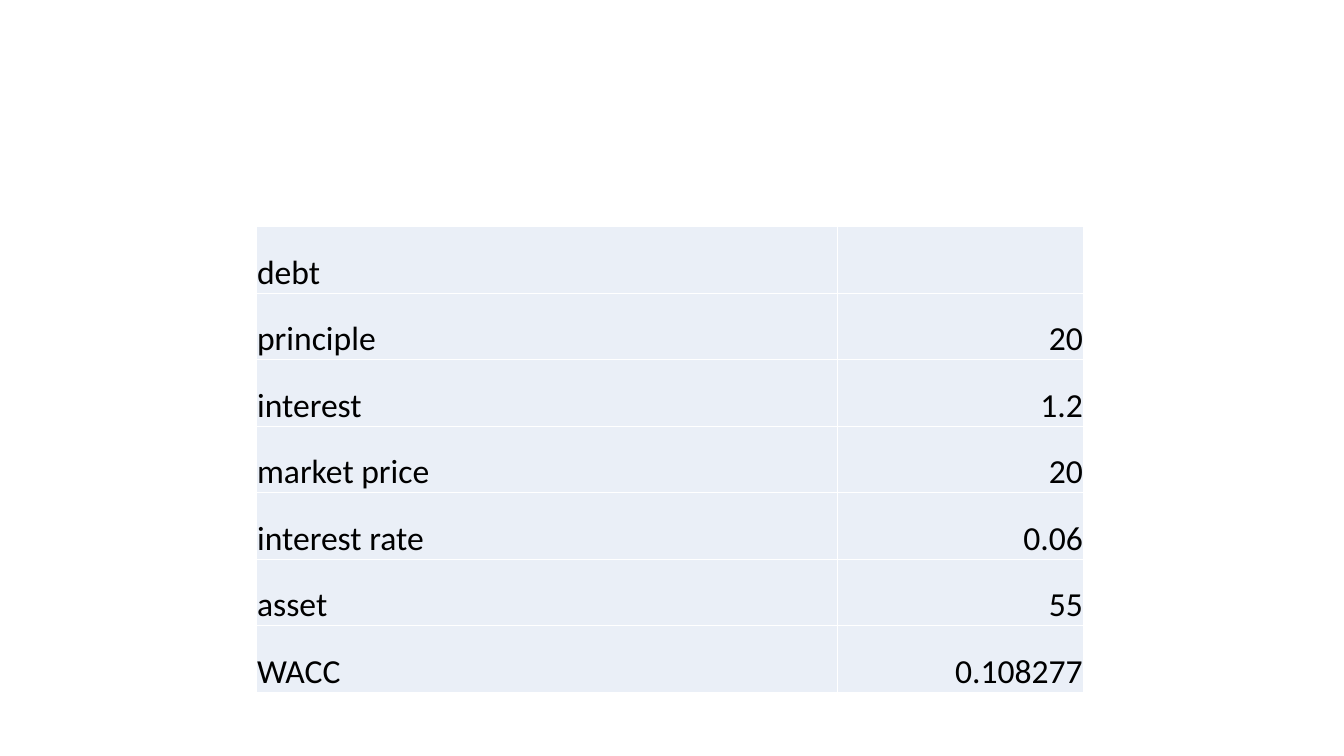
import lxml.etree
import pptx
import pptx.dml.color
import pptx.enum.text
import pptx.oxml.ns
import pptx.util

PX = 9144
ROWS = [
    ("debt", ""),
    ("principle", "20"),
    ("interest", "1.2"),
    ("market price", "20"),
    ("interest rate", "0.06"),
    ("asset", "55"),
    ("WACC", "0.108277"),
]


def px(n):
    return pptx.util.Emu(n * PX)


def rgb(color):
    return pptx.dml.color.RGBColor.from_string(color)


class Deck:
    """Holds the table style and the current slide."""

    font, size, ink = "Calibri", 24, "000000"
    fill, border, border_pt = "EAEFF7", "FFFFFF", 1

    def __init__(self, width, height):
        self.prs = pptx.Presentation()
        self.prs.slide_width, self.prs.slide_height = px(width), px(height)
        self.s = self.prs.slides.add_slide(self.prs.slide_layouts[6])

    def borders(self, cell):
        tc_pr = cell._tc.get_or_add_tcPr()
        qn = pptx.oxml.ns.qn
        width = str(pptx.util.Pt(self.border_pt))
        for side in ("lnL", "lnR", "lnT", "lnB"):
            ln = lxml.etree.SubElement(tc_pr, qn("a:" + side), w=width)
            solid = lxml.etree.SubElement(ln, qn("a:solidFill"))
            lxml.etree.SubElement(solid, qn("a:srgbClr"), val=self.border)

    def cell(self, cell, text, align):
        self.borders(cell)
        cell.fill.solid()
        cell.fill.fore_color.rgb = rgb(self.fill)
        cell.vertical_anchor = pptx.enum.text.MSO_ANCHOR.BOTTOM
        cell.margin_left = cell.margin_right = cell.margin_top = px(1)
        cell.margin_bottom = 0
        cell.text = text
        p = cell.text_frame.paragraphs[0]
        p.alignment = align
        p.font.name, p.font.size = self.font, pptx.util.Pt(self.size)
        p.font.color.rgb = rgb(self.ink)

    def table(self, left, top, widths, row_height, rows):
        height = row_height * len(rows)
        table = self.s.shapes.add_table(
            len(rows), len(widths), px(left), px(top), px(sum(widths)), px(height)
        ).table
        table.first_row = table.horz_banding = False
        for column, width in zip(table.columns, widths):
            column.width = px(width)
        aligns = (pptx.enum.text.PP_ALIGN.LEFT, pptx.enum.text.PP_ALIGN.RIGHT)
        for row, texts in zip(table.rows, rows):
            row.height = px(row_height)
            for cell, text, align in zip(row.cells, texts, aligns):
                self.cell(cell, text, align)


def main():
    deck = Deck(1333, 750)
    deck.table(254, 225, (577, 244), 66, ROWS)
    deck.prs.save("out.pptx")


if __name__ == "__main__":
    main()
